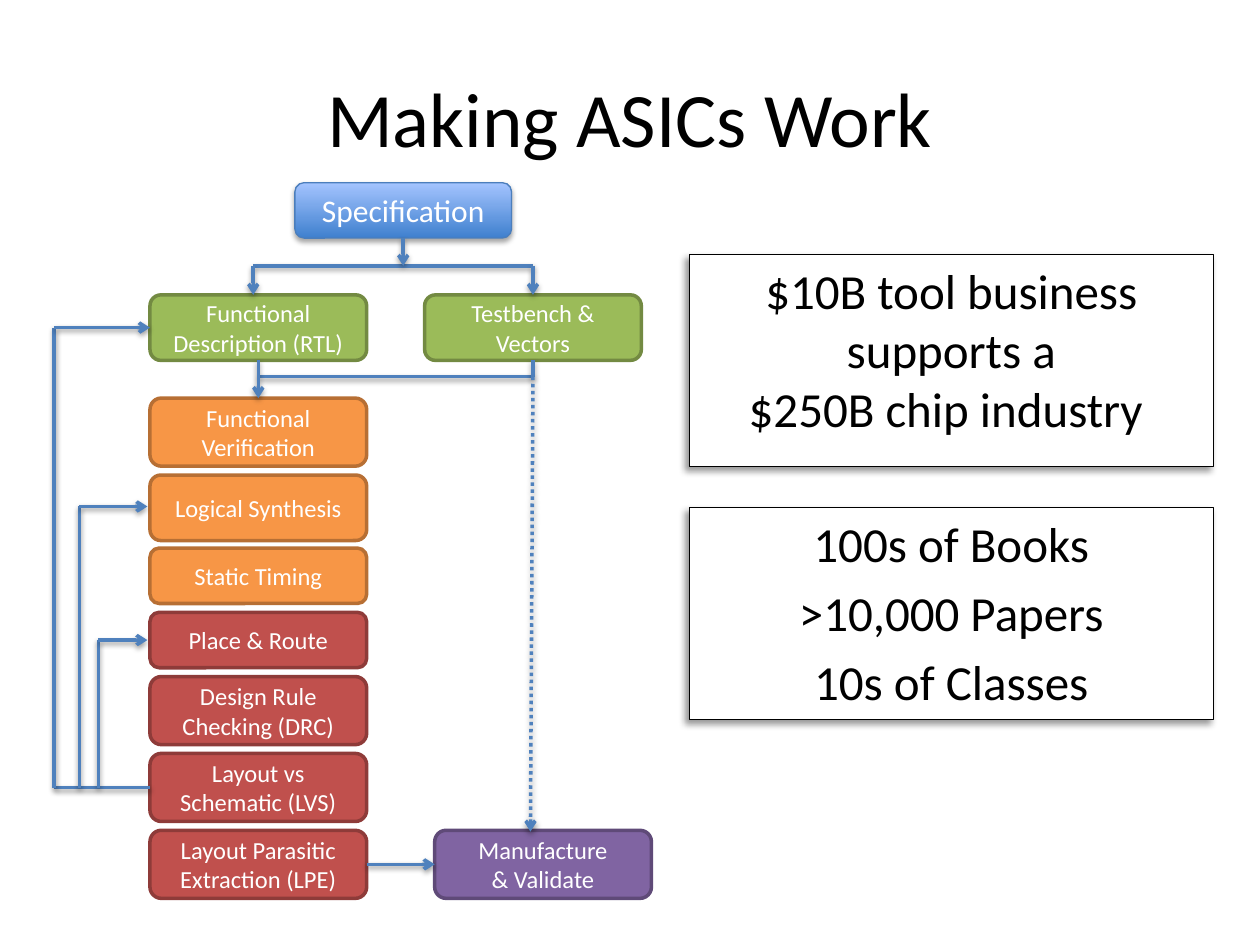
from lxml import etree
from pptx import Presentation
from pptx.dml.color import RGBColor
from pptx.enum.dml import MSO_LINE
from pptx.enum.shapes import MSO_CONNECTOR, MSO_SHAPE
from pptx.enum.text import MSO_ANCHOR, PP_ALIGN
from pptx.oxml.ns import qn
from pptx.util import Inches, Pt

STRAIGHT = MSO_CONNECTOR.STRAIGHT
RECTANGLE, ROUNDED = MSO_SHAPE.RECTANGLE, MSO_SHAPE.ROUNDED_RECTANGLE
TOP, MIDDLE, CENTER = MSO_ANCHOR.TOP, MSO_ANCHOR.MIDDLE, PP_ALIGN.CENTER
DOTTED = MSO_LINE.ROUND_DOT
TOP_SIDE, LEFT_SIDE, BOTTOM_SIDE, RIGHT_SIDE = range(4)

BLACK = RGBColor(0x00, 0x00, 0x00)
WHITE = RGBColor(0xFF, 0xFF, 0xFF)
ARROW_BLUE = RGBColor(0x4F, 0x81, 0xBD)
SPEC_EDGE = RGBColor(0x4B, 0x7E, 0xBC)
SPEC_DARK = RGBColor(0x3F, 0x80, 0xCE)
SPEC_LIGHT = RGBColor(0xA4, 0xC4, 0xFF)
# Fill and edge of each design stage
GREEN = RGBColor(0x9B, 0xBB, 0x59), RGBColor(0x73, 0x8A, 0x42)
ORANGE = RGBColor(0xF7, 0x96, 0x46), RGBColor(0xB7, 0x6F, 0x34)
RED = RGBColor(0xC0, 0x50, 0x4D), RGBColor(0x8E, 0x3B, 0x39)
PURPLE = RGBColor(0x80, 0x64, 0xA2), RGBColor(0x5F, 0x4A, 0x78)

# Shadows: opacity %, blur pt, distance pt, direction degrees
SPEC_SHADOW = (35, 3.1, 1.8, 90)
LINE_SHADOW = (38, 3.1, 1.6, 90)
PANEL_SHADOW = (40, 4, 3, 135)

FONT = "Calibri"
NODE_WIDTH = 1.72
FLOW_LEFT = 1.19
BENCH_LEFT = 3.37
BENCH_X = BENCH_LEFT + NODE_WIDTH / 2
FLOW_X = FLOW_LEFT + NODE_WIDTH / 2
SPLIT_Y, MERGE_Y = 2.11, 2.99
FEEDBACK_Y = 6.25

# Main column: text, top, height, colours
FLOW = [
    ("Functional Description (RTL)", 2.34, 0.52, GREEN),
    ("Functional Verification", 3.16, 0.54, ORANGE),
    ("Logical Synthesis", 3.77, 0.52, ORANGE),
    ("Static Timing", 4.35, 0.44, ORANGE),
    ("Place & Route", 4.86, 0.44, RED),
    ("Design Rule Checking (DRC)", 5.37, 0.54, RED),
    ("Layout vs Schematic (LVS)", 5.98, 0.54, RED),
    ("Layout Parasitic Extraction (LPE)", 6.59, 0.54, RED),
]


def add_shadow(shape, opacity, blur, distance, direction):
    effects = shape._element.spPr.find(qn("a:effectLst"))
    if effects is None:
        effects = etree.SubElement(shape._element.spPr, qn("a:effectLst"))
    shadow = etree.SubElement(
        effects, qn("a:outerShdw"), blurRad=str(Pt(blur)), dist=str(Pt(distance)),
        dir=str(direction * 60000), algn="ctr", rotWithShape="0")
    color = etree.SubElement(shadow, qn("a:srgbClr"), val=str(BLACK))
    etree.SubElement(color, qn("a:alpha"), val=str(opacity * 1000))


def write_text(shape, paragraphs, size, color, anchor=MIDDLE, space=0):
    frame = shape.text_frame
    frame.word_wrap = True
    frame.vertical_anchor = anchor
    font_format = {"name": FONT, "size": Pt(size)}
    for index, text in enumerate(paragraphs):
        paragraph = frame.add_paragraph() if index else frame.paragraphs[0]
        paragraph.text = text
        paragraph.alignment = CENTER
        if index:
            paragraph.space_before = Pt(space)
        for name, value in font_format.items():
            setattr(paragraph.font, name, value)
        paragraph.font.color.rgb = color


def add_box(slide, kind, left, top, width, height, fill, edge, edge_width):
    shape = slide.shapes.add_shape(
        kind, Inches(left), Inches(top), Inches(width), Inches(height))
    shape.fill.solid()
    shape.fill.fore_color.rgb = fill
    shape.line.color.rgb = edge
    shape.line.width = Pt(edge_width)
    shape.shadow.inherit = False
    return shape


def add_node(slide, paragraphs, left, top, height, colors):
    node = add_box(slide, ROUNDED, left, top, NODE_WIDTH, height, *colors, 2)
    write_text(node, paragraphs, 14, WHITE)
    return node


def add_specification(slide):
    node = add_box(slide, ROUNDED, 2.34, 1.45, NODE_WIDTH, 0.44,
                   SPEC_DARK, SPEC_EDGE, 0.75)
    node.fill.gradient()
    node.fill.gradient_angle = 90
    for stop, color in zip(node.fill.gradient_stops, (SPEC_DARK, SPEC_LIGHT)):
        stop.color.rgb = color
    add_shadow(node, *SPEC_SHADOW)
    write_text(node, ["Specification"], 18, WHITE)
    return node


def add_panel(slide, top, paragraphs):
    panel = add_box(slide, RECTANGLE, 5.47, top, 4.16, 1.68, WHITE, BLACK, 0.75)
    add_shadow(panel, *PANEL_SHADOW)
    write_text(panel, paragraphs, 28, BLACK, TOP, 5.6)


def add_line(slide, start, end, arrow=False, dash=None, begin=None, finish=None):
    """Draw a line; begin and finish are optional (shape, side) joints."""
    line = slide.shapes.add_connector(
        STRAIGHT, *(Inches(value) for value in (*start, *end)))
    if begin:
        line.begin_connect(*begin)
    if finish:
        line.end_connect(*finish)
    line.line.color.rgb = ARROW_BLUE
    line.line.width = Pt(2)
    if dash:
        line.line.dash_style = dash
    if arrow:
        etree.SubElement(line.line._get_or_add_ln(), qn("a:tailEnd"), type="arrow")
    add_shadow(line, *LINE_SHADOW)


def add_forward_lines(slide, specification, flow, bench, manufacture):
    rtl, verification, lpe = flow[0], flow[1], flow[-1]
    # Specification splits into description and testbench
    add_line(slide, (2.01, SPLIT_Y), (BENCH_X, SPLIT_Y))
    add_line(slide, (BENCH_X, SPLIT_Y), (BENCH_X, 2.34), arrow=True,
             finish=(bench, TOP_SIDE))
    add_line(slide, (2.01, SPLIT_Y), (2.01, 2.34), arrow=True)
    add_line(slide, (3.2, 1.89), (3.2, SPLIT_Y), arrow=True,
             begin=(specification, BOTTOM_SIDE))
    # Both merge into verification
    add_line(slide, (FLOW_X, MERGE_Y), (BENCH_X, MERGE_Y))
    add_line(slide, (BENCH_X, 2.86), (BENCH_X, MERGE_Y), begin=(bench, BOTTOM_SIDE))
    add_line(slide, (FLOW_X, 2.86), (FLOW_X, 3.16), arrow=True,
             begin=(rtl, BOTTOM_SIDE), finish=(verification, TOP_SIDE))
    # Testbench and layout lead to manufacture
    add_line(slide, (BENCH_X, MERGE_Y), (4.21, 6.6), arrow=True, dash=DOTTED)
    add_line(slide, (2.91, 6.86), (3.45, 6.86), arrow=True,
             begin=(lpe, RIGHT_SIDE), finish=(manufacture, LEFT_SIDE))


def add_feedback_lines(slide, flow):
    rtl, lvs = flow[0], flow[-2]
    add_line(slide, (FLOW_LEFT, FEEDBACK_Y), (0.43, FEEDBACK_Y), begin=(lvs, LEFT_SIDE))
    loops = [(0.43, 2.6, (rtl, LEFT_SIDE)), (0.63, 4.02, None), (0.78, 5.08, None)]
    for x, y, joint in loops:
        add_line(slide, (x, y), (x, FEEDBACK_Y))
        add_line(slide, (x, y), (1.17, y), arrow=True, finish=joint)


def main():
    presentation = Presentation()
    presentation.slide_width, presentation.slide_height = Inches(10), Inches(7.5)
    slide = presentation.slides.add_slide(presentation.slide_layouts[5])

    # Title
    title = slide.shapes.title
    title.left, title.top = Inches(0.5), Inches(0.3)
    title.width, title.height = Inches(9), Inches(1.25)
    write_text(title, ["Making ASICs Work"], 44, BLACK)

    # Design flow
    specification = add_specification(slide)
    flow = [add_node(slide, [text], FLOW_LEFT, top, height, colors)
            for text, top, height, colors in FLOW]
    bench = add_node(slide, ["Testbench & Vectors"], BENCH_LEFT, 2.34, 0.52, GREEN)
    manufacture = add_node(
        slide, ["Manufacture", "& Validate"], 3.45, 6.59, 0.54, PURPLE)
    add_forward_lines(slide, specification, flow, bench, manufacture)
    add_feedback_lines(slide, flow)

    # Side panels
    add_panel(slide, 2.02, ["$10B tool business\nsupports a\n$250B chip industry "])
    add_panel(slide, 4.03, ["100s of Books", ">10,000 Papers", "10s of Classes"])

    presentation.save("out.pptx")


if __name__ == "__main__":
    main()
